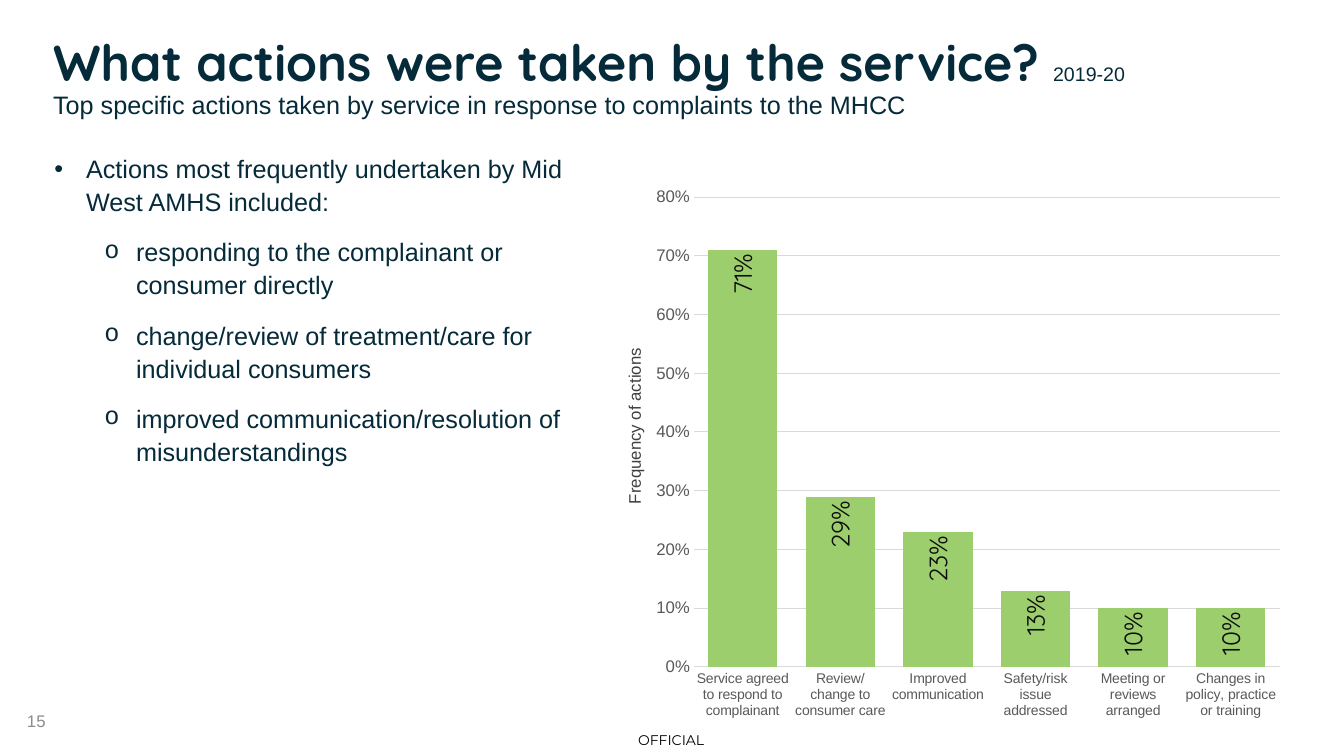
from pptx import Presentation, util as u
from pptx.chart.data import CategoryChartData
from pptx.dml.color import RGBColor
from pptx.enum import chart as ch, text as t
from pptx.oxml import parse_xml
from pptx.oxml.ns import nsdecls, qn

# Content
NAVY, GREEN, GRID = "052A39", "9DCE6E", "D9D9D9"
TITLE = [
    [("What actions were taken by the service? ", 36, "Quicksand", True),
     ("2019-20", 14, "Arial", False)],
    [("Top specific actions taken by service in response to complaints to the MHCC",
      18, "Arial", False)],
]
BULLETS = [
    (0, "Actions most frequently undertaken by Mid West AMHS included:"),
    (1, "responding to the complainant or consumer directly"),
    (1, "change/review of treatment/care for individual consumers"),
    (1, "improved communication/resolution of misunderstandings"),
]
ACTIONS = [
    ("Service agreed to respond to complainant", 0.71),
    ("Review/change to consumer care", 0.29),
    ("Improved communication", 0.23),
    ("Safety/risk issue addressed", 0.13),
    ("Meeting or reviews arranged", 0.1),
    ("Changes in policy, practice or training", 0.1),
]
PLOT = {"x": 0.058, "y": 0.183, "w": 0.911, "h": 0.725}


def color(value):
    return RGBColor.from_string(value)


def style(font, size, name, fill, bold=False):
    font.size, font.name, font.bold = u.Pt(size), name, bold
    font.color.rgb = color(fill)


def add_box(left, top, width, height, anchor=t.MSO_ANCHOR.TOP):
    sp = s.shapes.add_textbox(u.Cm(left), u.Cm(top), u.Cm(width), u.Cm(height))
    sp.text_frame.word_wrap = True
    sp.text_frame.vertical_anchor = anchor
    return sp


def add_label(words, box, size, name, fill, align, rotation=0):
    sp = add_box(*box, anchor=t.MSO_ANCHOR.MIDDLE)
    sp.rotation = rotation
    sp.text_frame.text = words
    p = sp.text_frame.paragraphs[0]
    p.alignment = align
    style(p.runs[0].font, size, name, fill)
    return sp


def add_bullet(p, level):
    pPr = p._p.get_or_add_pPr()
    pPr.set("marL", str(u.Cm((0.8, 2.06)[level])))
    pPr.set("indent", str(u.Cm(-0.8)))
    ns = nsdecls("a")
    for xml in (f'<a:buClr {ns}><a:srgbClr val="{NAVY}"/></a:buClr>',
                f'<a:buFont {ns} typeface="{("Arial", "Courier New")[level]}"/>',
                f'<a:buChar {ns} char="{"•o"[level]}"/>'):
        pPr.append(parse_xml(xml))


prs = Presentation()
prs.slide_width, prs.slide_height = u.Cm(33.87), u.Cm(19.05)
s = prs.slides.add_slide(prs.slide_layouts[6])

# Footer
official = add_label("OFFICIAL", (15.62, 18.26, 2.59, 0.79), 10, "Montserrat",
                     "000000", t.PP_ALIGN.CENTER)
tf = official.text_frame
tf.margin_left = tf.margin_right = tf.margin_top = tf.margin_bottom = 0
add_label("15", (0.43, 17.65, 7.62, 1.02), 12, "Arial", "8C8C8C", t.PP_ALIGN.LEFT)

# Bullets
tf = add_box(1.12, 3.66, 14.33, 8.26).text_frame
tf.text = "\n".join(words for _, words in BULLETS)
for i, (p, (level, _)) in enumerate(zip(tf.paragraphs, BULLETS)):
    p.level = level
    p.line_spacing = 1.1
    p.space_before, p.space_after = u.Pt(6 if i else 0), u.Pt(6)
    add_bullet(p, level)
    style(p.runs[0].font, 18, "Arial", NAVY)

# Chart
data = CategoryChartData(number_format="0%")
data.categories = [name for name, _ in ACTIONS]
data.add_series("Series 1", [share for _, share in ACTIONS])
chart = s.shapes.add_chart(ch.XL_CHART_TYPE.COLUMN_CLUSTERED, u.Cm(16.54), u.Cm(1.98),
                           u.Cm(16.21), u.Cm(16.33), data).chart
chart.has_legend = chart.has_title = False
style(chart.font, 10, "Arial", "000000")

plot = chart.plots[0]
plot.gap_width, plot.vary_by_categories = 41, False
bars = plot.series[0]
bars.format.fill.solid()
bars.format.fill.fore_color.rgb = color(GREEN)
labels = bars.data_labels
labels.show_value = True
labels.number_format, labels.number_format_is_linked = "0%", False
labels.position = ch.XL_LABEL_POSITION.INSIDE_END
style(labels.font, 18, "Quicksand", "0D0D0D")
body = labels._element.find(qn("c:txPr")).find(qn("a:bodyPr"))
body.set("rot", "-5400000")
body.set("vert", "horz")

# Axes
cat, val = chart.category_axis, chart.value_axis
for axis, size in ((cat, 10), (val, 12)):
    axis.major_tick_mark = axis.minor_tick_mark = ch.XL_TICK_MARK.NONE
    style(axis.tick_labels.font, size, "Arial", "595959")
val.minimum_scale, val.maximum_scale, val.major_unit = 0, 0.8, 0.1
val.tick_labels.number_format = "0%"
val.tick_labels.number_format_is_linked = False
val.format.line.fill.background()
val.has_major_gridlines = True
for line in (cat.format.line, val.major_gridlines.format.line):
    line.color.rgb, line.width = color(GRID), u.Pt(0.75)

# Fixed inner plot area
area = chart._chartSpace.chart.plotArea
for old in area.findall(qn("c:layout")):
    area.remove(old)
sizes = "".join(f'<c:{key} val="{value}"/>' for key, value in PLOT.items())
area.insert(0, parse_xml(
    f'<c:layout {nsdecls("c")}><c:manualLayout><c:layoutTarget val="inner"/>'
    f'<c:xMode val="edge"/><c:yMode val="edge"/>{sizes}</c:manualLayout></c:layout>'))

# Title
tf = add_box(1.09, 0.84, 31.7, 2.36).text_frame
for i, runs in enumerate(TITLE):
    p = tf.add_paragraph() if i else tf.paragraphs[0]
    p.line_spacing = 0.9
    for words, size, name, bold in runs:
        r = p.add_run()
        r.text = words
        style(r.font, size, name, NAVY, bold)

# Axis title
add_label("Frequency of actions", (13, 10.19, 5.97, 1.09), 12, "Arial", "404040",
          t.PP_ALIGN.CENTER, 270)

prs.save("out.pptx")
